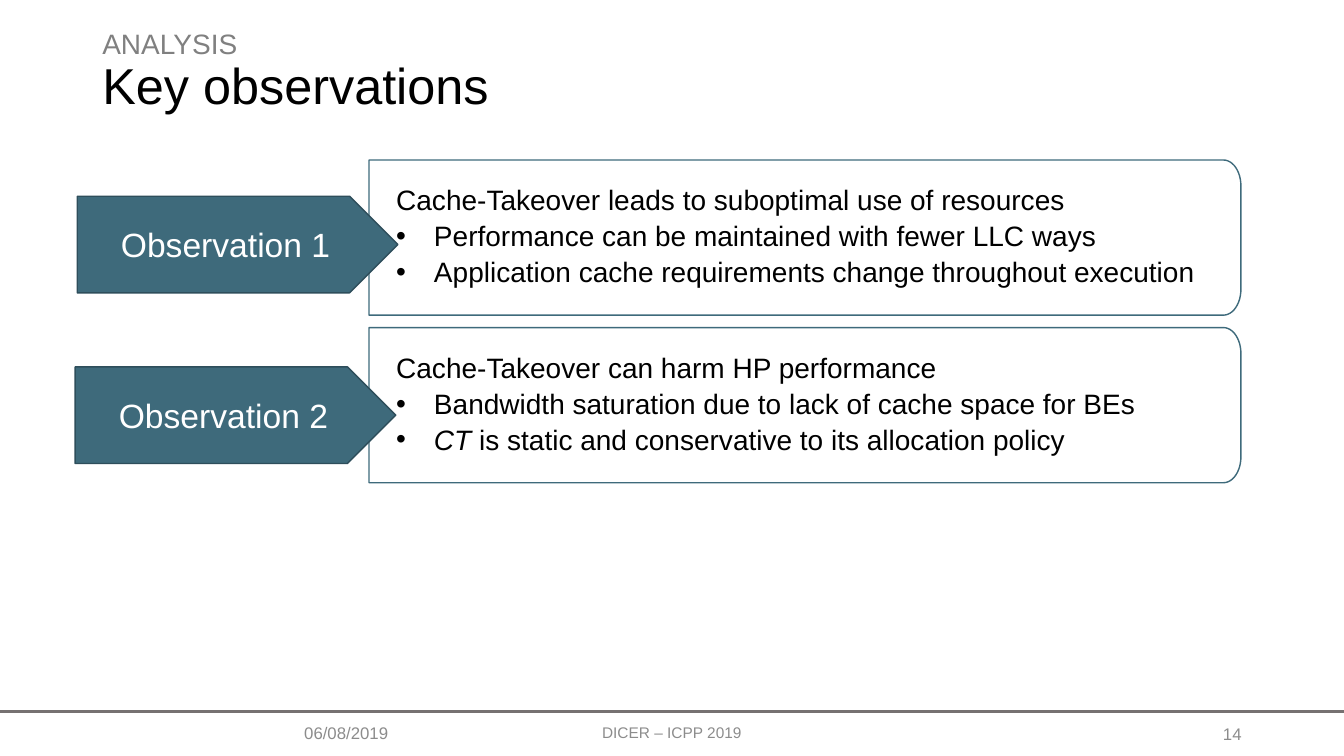
from math import cos, pi, sin

from lxml.etree import SubElement
from pptx import Presentation
from pptx.dml.color import RGBColor
from pptx.enum.shapes import MSO_CONNECTOR, MSO_SHAPE
from pptx.enum.text import MSO_ANCHOR, PP_ALIGN
from pptx.oxml.ns import qn
from pptx.util import Pt

BLACK = RGBColor(0x00, 0x00, 0x00)
WHITE = RGBColor(0xFF, 0xFF, 0xFF)
TEAL = RGBColor(0x3E, 0x6A, 0x7B)
EDGE = RGBColor(0x2E, 0x4E, 0x5B)
RULE = RGBColor(0x76, 0x71, 0x71)
GREY = RGBColor(0x80, 0x80, 0x80)
PALE = RGBColor(0x8C, 0x8C, 0x8C)


class Deck:
    """Hold the font and the current slide, and draw each kind of element."""

    def __init__(self, wide, high, font):
        self.show = Presentation()
        self.show.slide_width = Pt(wide)
        self.show.slide_height = Pt(high)
        self.font = font
        self.slide = self.show.slides.add_slide(self.show.slide_layouts[6])
        self.shapes = self.slide.shapes

    def style(self, font, size, color, **more):
        for name, value in {"name": self.font, "size": Pt(size), **more}.items():
            setattr(font, name, value)
        font.color.rgb = color

    def frame(self, shape, pads=(7.2, 3.6, 7.2, 3.6)):
        frame = shape.text_frame
        sides = ("left", "top", "right", "bottom")
        form = {f"margin_{side}": Pt(pad) for side, pad in zip(sides, pads)}
        form |= {"word_wrap": True, "vertical_anchor": MSO_ANCHOR.MIDDLE}
        for name, value in form.items():
            setattr(frame, name, value)
        return frame

    def paint(self, shape, fill, line):
        shape.shadow.inherit = False
        shape.fill.solid()
        shape.fill.fore_color.rgb = fill
        shape.line.color.rgb = line
        shape.line.width = Pt(1)

    def label(self, shape, text, size, color, align):
        para = self.frame(shape).paragraphs[0]
        para.alignment = align
        run = para.add_run()
        run.text = text
        self.style(run.font, size, color)

    def text(self, box, text, size, color, align):
        self.label(self.shapes.add_textbox(*map(Pt, box)), text, size, color, align)

    def title(self, box, topic, head):
        para = self.frame(self.shapes.add_textbox(*map(Pt, box))).paragraphs[0]
        para.line_spacing = 0.9
        for text, size, color in ((topic, 20, GREY), (head, 36, BLACK)):
            if para.runs:
                para.add_line_break()
            run = para.add_run()
            run.text = text
            self.style(run.font, size, color)

    def rule(self, y):
        line = self.shapes.add_connector(
            MSO_CONNECTOR.STRAIGHT, 0, Pt(y), self.show.slide_width, Pt(y))
        line.line.color.rgb = RULE
        line.line.width = Pt(2.25)
        SubElement(line._element.spPr, qn("a:effectLst"))

    def arrow(self, box, text):
        shape = self.shapes.add_shape(MSO_SHAPE.PENTAGON, *map(Pt, box))
        self.paint(shape, TEAL, EDGE)
        self.label(shape, text, 24, WHITE, PP_ALIGN.CENTER)

    def panel(self, box, lines):
        left, top, wide, high = box
        right, base = left + wide, top + high
        curve, steps = (12.5, 18.5), 12
        turns = [pi / 2 * step / steps for step in range(steps + 1)]
        arc = [(right - curve[0] * (1 - sin(turn)), curve[1] * (1 - cos(turn)))
               for turn in turns]
        points = [(x, top + drop) for x, drop in arc]
        points += [(x, base - drop) for x, drop in reversed(arc)]
        points.append((left, base))
        path = self.shapes.build_freeform(Pt(left), Pt(top))
        path.add_line_segments([(Pt(x), Pt(y)) for x, y in points], close=True)
        shape = path.convert_to_shape()
        self.paint(shape, WHITE, TEAL)
        frame = self.frame(shape, (19.4, 13, 22.3, 13))
        for index, parts in enumerate(lines):
            para = frame.add_paragraph() if index else frame.paragraphs[0]
            if index:
                self.bullet(para)
            form = {"alignment": PP_ALIGN.LEFT, "line_spacing": 0.9, "space_after": Pt(4)}
            for name, value in form.items():
                setattr(para, name, value)
            for text, slant in parts:
                run = para.add_run()
                run.text = text
                self.style(run.font, 20, BLACK, italic=slant)

    def bullet(self, para):
        props = para._p.get_or_add_pPr()
        props.set("marL", str(Pt(27)))
        props.set("indent", str(Pt(-27)))
        SubElement(props, qn("a:buFont")).set("typeface", self.font)
        SubElement(props, qn("a:buChar")).set("char", "•")

    def save(self):
        self.show.save("out.pptx")


def main():
    deck = Deck(960, 540, "Arial")
    deck.rule(508.3)
    deck.title((66, 0, 828, 104.4), "ANALYSIS", "Key observations")
    deck.text((210.2, 513.4, 85, 20.2), "06/08/2019", 12, PALE, PP_ALIGN.LEFT)
    deck.text((318, 509, 324, 28.8), "DICER – ICPP 2019", 11, PALE, PP_ALIGN.CENTER)
    deck.text((678, 509.8, 216, 28.8), "14", 12, PALE, PP_ALIGN.RIGHT)
    notes = (
        (55.2, 140.2, (
            (("Cache-Takeover leads to suboptimal use of resources", False),),
            (("Performance can be maintained with fewer LLC ways", False),),
            (("Application cache requirements change throughout execution", False),),
        )),
        (53.7, 262.1, (
            (("Cache-Takeover can harm HP performance", False),),
            (("Bandwidth saturation due to lack of cache space for BEs", False),),
            (("CT", True), (" is static and conservative to its allocation policy", False)),
        )),
    )
    for index, (x, y, lines) in enumerate(notes):
        deck.panel((263.6, 114.3 + 119.7 * index, 622.8, 110.8), lines)
        deck.arrow((x, y, 229, 69), f"Observation {index + 1}")
    deck.save()


if __name__ == "__main__":
    main()
